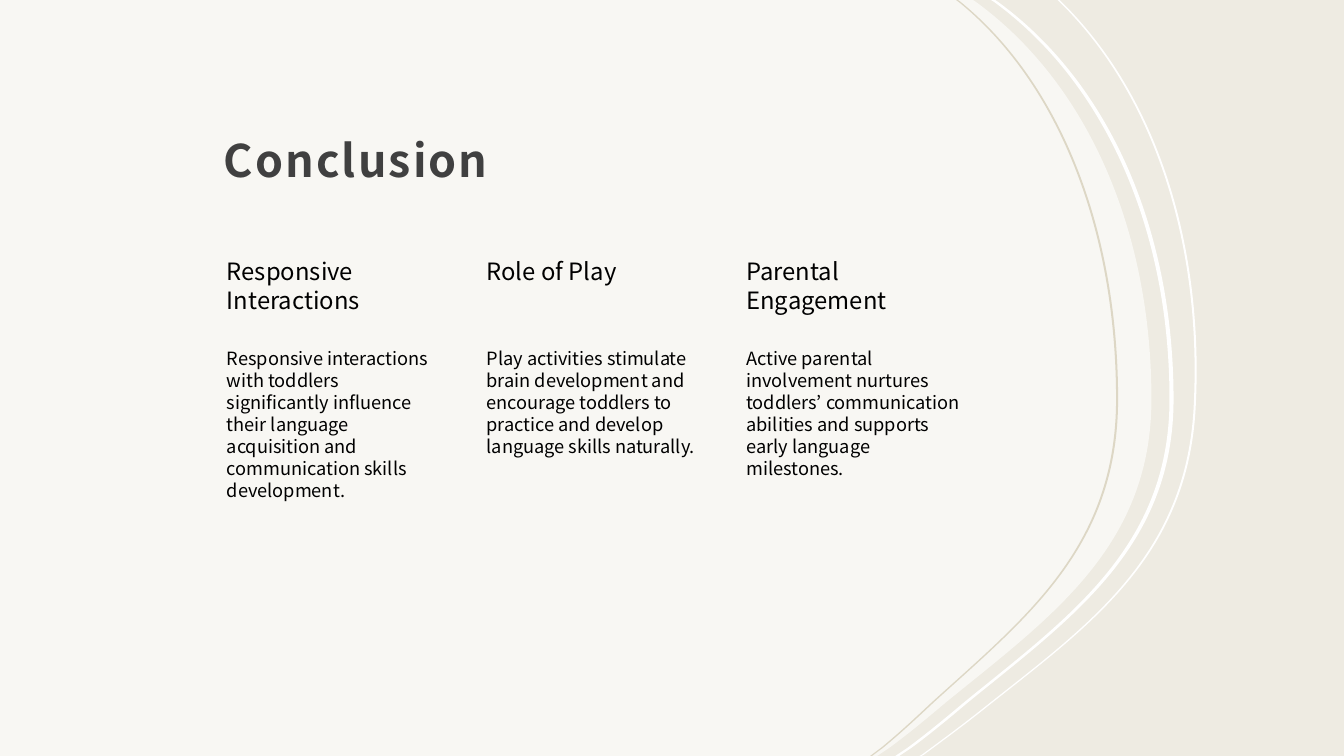
from dataclasses import dataclass

from lxml.etree import SubElement
from pptx import Presentation
from pptx.dml.color import RGBColor
from pptx.enum.text import MSO_ANCHOR
from pptx.oxml.ns import qn
from pptx.util import Inches, Pt


@dataclass(frozen=True)
class Theme:
    """Colours, font and type sizes of the deck."""
    background: str = "EEEBE2"
    white: str = "FFFFFF"
    sand: str = "DDD7C5"
    title_color: str = "404040"
    text_color: str = "000000"
    font: str = "Noto Sans CJK JP"
    title_size: int = 32
    heading_size: int = 17
    body_size: int = 13


THEME = Theme()
SLIDE_WIDTH, SLIDE_HEIGHT = 13.33, 7.5

PANEL_EDGE = [
    (9.65, 0), (9.68, 0.02), (10.79, 0.83), (11.42, 2.29), (11.42, 3.96),
    (11.42, 5.43), (10.41, 6.13), (9.38, 6.97),
    (9.19, 7.13), (9.01, 7.28), (8.82, 7.42), (8.7, 7.5),
]
OUTER_EDGE = [
    (10.51, 0), (10.54, 0.03), (11.46, 0.94), (11.94, 2.4), (11.86, 4.02),
    (11.79, 5.55), (10.77, 6.23), (9.73, 7.06),
    (9.54, 7.21), (9.35, 7.35), (9.16, 7.49), (9.14, 7.5),
]
COLUMNS = [
    ("Responsive Interactions",
     "Responsive interactions with toddlers significantly influence their "
     "language acquisition and communication skills development."),
    ("Role of Play",
     "Play activities stimulate brain development and encourage toddlers to "
     "practice and develop language skills naturally."),
    ("Parental Engagement",
     "Active parental involvement nurtures toddlers’ communication abilities "
     "and supports early language milestones."),
]


def move_edge(edge, shift, scale=1):
    """Scale an edge about its bottom end and shift it sideways."""
    foot = edge[-1][0]
    return [(foot + shift + scale * (x - foot), y) for x, y in edge]


def split_edge(edge):
    """Split an edge into a line, three cubic curves and a line."""
    return [edge[:1], edge[1:2], edge[2:5], edge[5:8], edge[8:11], edge[11:]]


def add_outline(slide, segments, color, opacity=100):
    """Draw a closed filled outline of lines and cubic curves without a border."""
    pen = [[(Inches(x), Inches(y)) for x, y in segment] for segment in segments]
    builder = slide.shapes.build_freeform(*pen[0][0])
    builder.add_line_segments([segment[-1] for segment in pen[1:]], close=True)
    shape = builder.convert_to_shape()
    lines = list(shape._element.iter(qn("a:lnTo")))
    for line, segment in zip(lines, pen[1:]):
        if len(segment) == 3:
            line.tag = qn("a:cubicBezTo")
            for index, (x, y) in enumerate(segment[:2]):
                control = SubElement(line, qn("a:pt"))
                control.set("x", str(x - shape.left))
                control.set("y", str(y - shape.top))
                line.insert(index, control)
    shape.shadow.inherit = False
    shape.fill.solid()
    shape.fill.fore_color.rgb = RGBColor.from_string(color)
    shape.line.fill.background()
    if opacity < 100:
        for tint in shape.fill._xPr.iter(qn("a:srgbClr")):
            SubElement(tint, qn("a:alpha")).set("val", str(opacity * 1000))


def add_ribbon(slide, edge, width, color):
    """Draw a narrow band to the left of an edge."""
    inner = move_edge(edge, -width)
    add_outline(slide, split_edge(edge) + split_edge(inner[::-1]), color)


def add_backdrop(slide):
    """Draw the pale panel and the three ribbons beside it."""
    slide.background.fill.solid()
    slide.background.fill.fore_color.rgb = RGBColor.from_string(THEME.background)
    panel = [[(0, 0)], *split_edge(PANEL_EDGE), [(0, SLIDE_HEIGHT)]]
    add_outline(slide, panel, THEME.white, opacity=60)
    add_ribbon(slide, OUTER_EDGE, 0.02, THEME.white)
    add_ribbon(slide, move_edge(PANEL_EDGE, 0.22), 0.04, THEME.white)
    add_ribbon(slide, move_edge(PANEL_EDGE, -0.05, 2.44 / 2.72), 0.02, THEME.sand)


def add_text(slide, box, text, size, color, insets):
    """Add a one-paragraph text box and return its frame."""
    frame = slide.shapes.add_textbox(*map(Inches, box)).text_frame
    frame.word_wrap = True
    (frame.margin_left, frame.margin_top,
     frame.margin_right, frame.margin_bottom) = map(Inches, insets)
    frame.text = text
    span = frame.paragraphs[0].runs[0]
    span.font.name = THEME.font
    span.font.size = Pt(size)
    span.font.color.rgb = RGBColor.from_string(color)
    return frame


def add_title(slide, box, text):
    """Add the bold, letter-spaced title at the foot of its box."""
    frame = add_text(slide, box, text, THEME.title_size, THEME.title_color,
                     (0.12, 0.12, 0.12, 0.1))
    frame.vertical_anchor = MSO_ANCHOR.BOTTOM
    para = frame.paragraphs[0]
    para.line_spacing = 1.3
    span = para.runs[0]
    span.font.bold = True
    span.font._element.set("spc", "150")


def add_columns(slide, box, columns, gap=0.24, heading_height=0.9):
    """Spread headings with their body text evenly over a box."""
    left, top, width, height = box
    column_width = (width - gap * (len(columns) - 1)) / len(columns)
    insets = (0.15, 0.02, 0.02, 0.02)
    for index, (heading, body) in enumerate(columns):
        x = left + index * (column_width + gap)
        add_text(slide, (x, top, column_width, heading_height), heading,
                 THEME.heading_size, THEME.text_color, insets)
        add_text(slide, (x, top + heading_height, column_width, height - heading_height),
                 body, THEME.body_size, THEME.text_color, insets)


def main():
    """Build the conclusion slide and save the deck."""
    deck = Presentation()
    deck.slide_width, deck.slide_height = Inches(SLIDE_WIDTH), Inches(SLIDE_HEIGHT)
    slide = deck.slides.add_slide(deck.slide_layouts[6])
    add_backdrop(slide)
    add_title(slide, (2.1, 0.48, 7.5, 1.47), "Conclusion")
    add_columns(slide, (2.1, 2.53, 7.49, 3.96), COLUMNS)
    deck.save("out.pptx")


if __name__ == "__main__":
    main()
